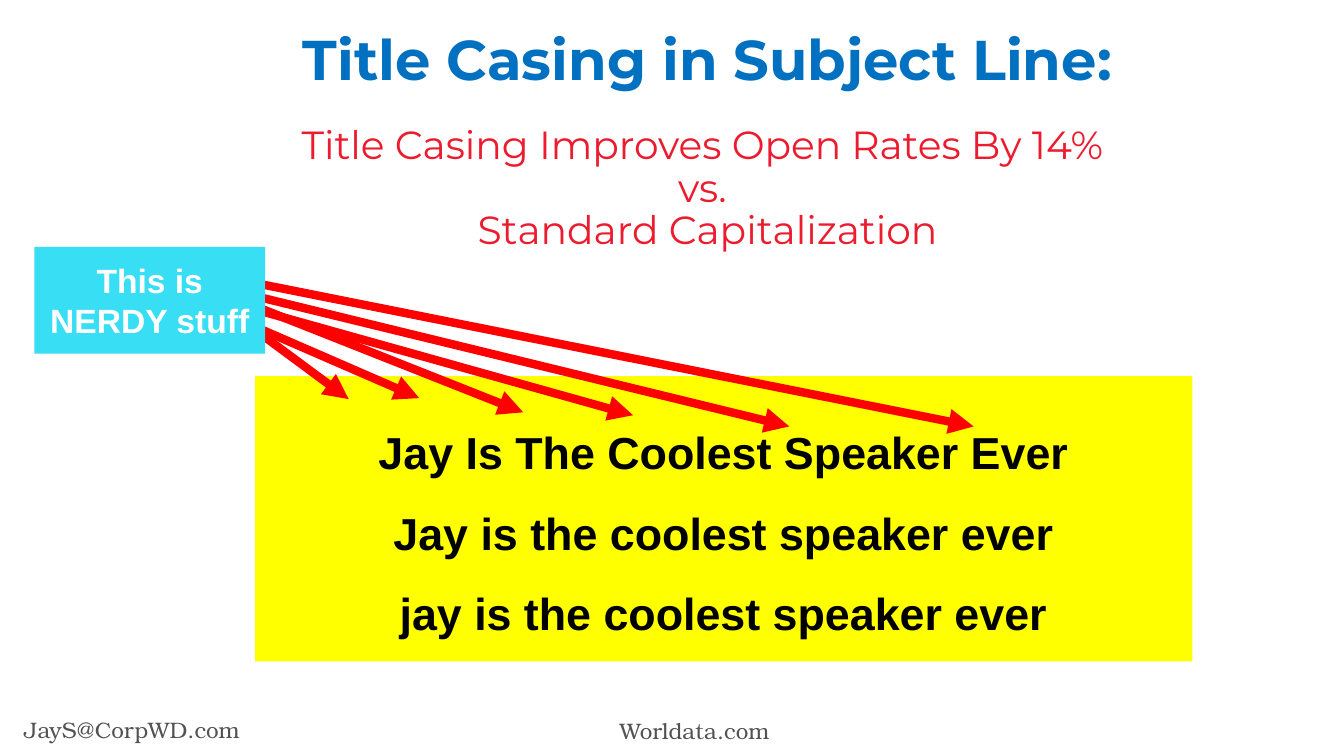
from dataclasses import dataclass
from typing import Any

from lxml.etree import SubElement
from pptx import Presentation
from pptx.dml.color import RGBColor
from pptx.enum.shapes import MSO_CONNECTOR, MSO_SHAPE
from pptx.enum.text import MSO_ANCHOR, MSO_AUTO_SIZE, PP_ALIGN
from pptx.oxml.ns import qn
from pptx.util import Pt

Format = dict[str, Any]


@dataclass
class Box:
    left: float
    top: float
    width: float
    height: float
    lines: list[str]
    style: Format
    fill: str = ""
    spacing: float = 1.0


@dataclass
class Arrow:
    x1: float
    y1: float
    x2: float
    y2: float


def color(code: str) -> RGBColor:
    return RGBColor.from_string(code)


def format_font(font: Any, style: Format) -> None:
    for key, value in style.items():
        if key == "color":
            font.color.rgb = color(value)
        else:
            setattr(font, key, value)


def set_lines(frame: Any, lines: list[str], styles: list[Format], spacing: float) -> None:
    """Write one centred paragraph per line, each with its own style."""
    frame.word_wrap = True
    frame.auto_size = MSO_AUTO_SIZE.NONE
    for index, (line, style) in enumerate(zip(lines, styles)):
        para = frame.paragraphs[0] if index == 0 else frame.add_paragraph()
        para.alignment = PP_ALIGN.CENTER
        para.line_spacing = spacing
        para.text = line
        for run in para.runs:
            format_font(run.font, style)


def draw_box(slide: Any, box: Box) -> None:
    place = (Pt(box.left), Pt(box.top), Pt(box.width), Pt(box.height))
    if box.fill:
        shape = slide.shapes.add_shape(MSO_SHAPE.RECTANGLE, *place)
        shape.shadow.inherit = False
        shape.fill.solid()
        shape.fill.fore_color.rgb = color(box.fill)
        shape.line.fill.background()
        shape.text_frame.vertical_anchor = MSO_ANCHOR.MIDDLE
    else:
        shape = slide.shapes.add_textbox(*place)
    set_lines(shape.text_frame, box.lines, [box.style] * len(box.lines), box.spacing)


def draw_arrow(slide: Any, arrow: Arrow) -> None:
    line = slide.shapes.add_connector(
        MSO_CONNECTOR.STRAIGHT,
        Pt(arrow.x1), Pt(arrow.y1), Pt(arrow.x2), Pt(arrow.y2),
    )
    line.line.color.rgb = color("FF0000")
    line.line.width = Pt(6)
    SubElement(line.line._get_or_add_ln(), qn("a:tailEnd"), type="triangle")
    SubElement(line._element.spPr, qn("a:effectLst"))


def draw_title(slide: Any) -> None:
    title = slide.shapes.title
    spots = {"left": 170.6, "top": 62.6, "width": 669.6, "height": 78.5}
    for key, value in spots.items():
        setattr(title, key, Pt(value))
    frame = title.text_frame
    frame.vertical_anchor = MSO_ANCHOR.MIDDLE
    lines = [
        "Title Casing in Subject Line:",
        "Title Casing Improves Open Rates By 14% \vvs. \vStandard Capitalization",
    ]
    set_lines(frame, lines, [HEAD, SUBHEAD], 0.9)
    frame.paragraphs[1].space_before = Pt(24)


HEAD: Format = {"name": "Montserrat", "size": Pt(40), "bold": True, "color": "0070C0"}
SUBHEAD: Format = HEAD | {"size": Pt(28), "bold": False, "color": "EC1B2E"}
FOOT: Format = {"name": "TeX Gyre Bonum", "size": Pt(16), "color": "525252"}
SAMPLE: Format = {"name": "Arial", "size": Pt(32), "bold": True, "color": "000000"}
NOTE: Format = SAMPLE | {"size": Pt(24), "color": "FFFFFF"}

FEET = [
    Box(0, 508.3, 188.6, 26.6, ["JayS@CorpWD.com"], FOOT),
    Box(401.8, 509, 188.6, 26.6, ["Worldata.com"], FOOT),
]
SAMPLES = Box(
    182.2, 268.6, 669.6, 203.8,
    [
        "Jay Is The Coolest Speaker Ever",
        "Jay is the coolest speaker ever",
        "jay is the coolest speaker ever",
    ],
    SAMPLE, "FFFF00", 1.5,
)
ARROWS = [
    Arrow(121.7, 190.8, 249.1, 285.1),
    Arrow(133.9, 212.4, 299.5, 284.4),
    Arrow(160.6, 210.2, 373.7, 294.5),
    Arrow(159.1, 214.6, 452.2, 296.6),
    Arrow(180, 211, 563.8, 304.6),
    Arrow(175.7, 200.9, 695.5, 304.6),
]
NERDY = Box(24.5, 176.4, 164.9, 76.3, ["This is NERDY stuff"], NOTE, "38DEF4")


def main() -> None:
    deck = Presentation()
    deck.slide_width, deck.slide_height = Pt(960), Pt(540)
    slide = deck.slides.add_slide(deck.slide_layouts.get_by_name("Title Only"))
    draw_title(slide)
    for box in [*FEET, SAMPLES]:
        draw_box(slide, box)
    for arrow in ARROWS:
        draw_arrow(slide, arrow)
    draw_box(slide, NERDY)
    deck.save("out.pptx")


if __name__ == "__main__":
    main()
